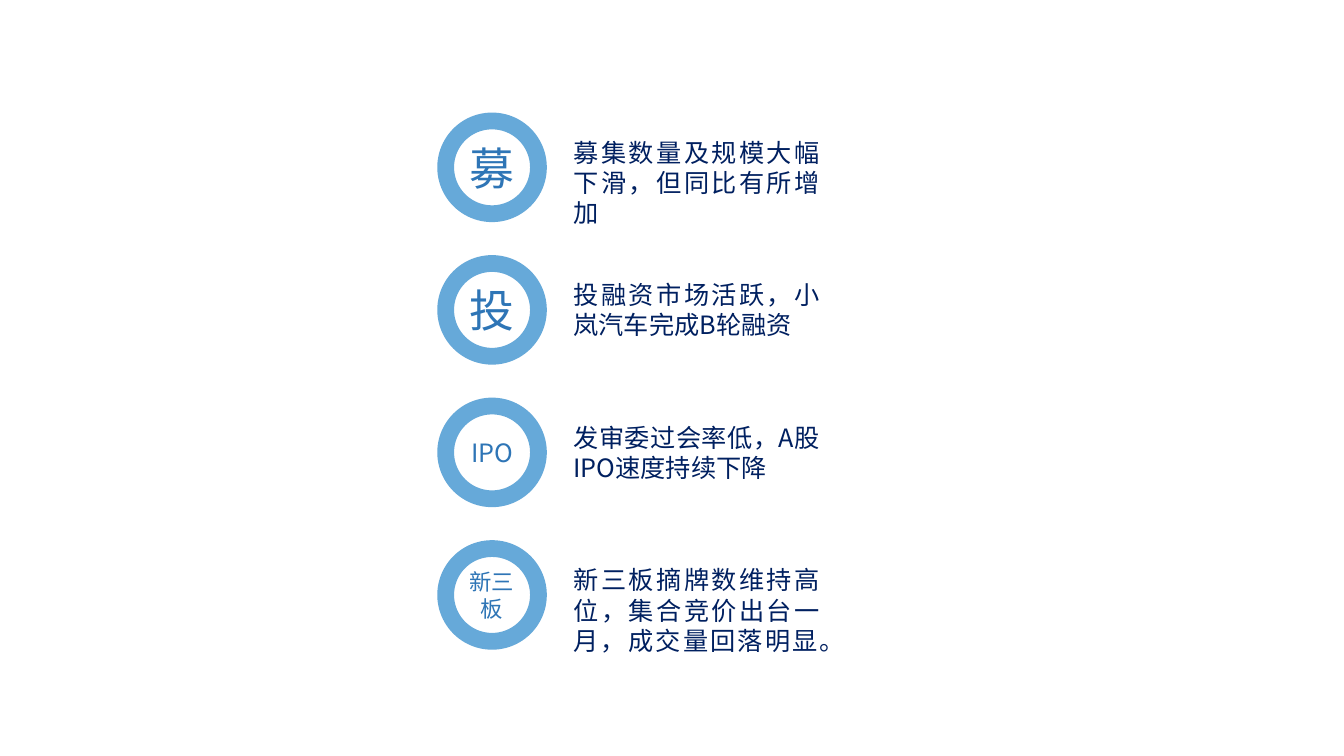
import dataclasses

import lxml.etree
import pptx
import pptx.dml.color
import pptx.enum.shapes
import pptx.enum.text
import pptx.oxml.ns
import pptx.util
from pptx.util import Inches


@dataclasses.dataclass(frozen=True)
class Theme:
    """Colours, fonts and type sizes of the slide."""
    ring: str = "0070C0"
    ring_opacity: int = 60
    ring_width: int = 12
    badge_text: str = "2E75B6"
    summary_text: str = "002060"
    badge_font: str = "Noto Sans CJK JP"
    summary_font: str = "Noto Sans CJK SC"
    character_size: int = 32
    acronym_size: int = 18
    board_size: int = 16
    summary_size: int = 18


THEME = Theme()
FIRST_TOP = 1.2
ROW_PITCH = 1.414
BADGE_LEFT = 4.42
BADGE_SIZE = 0.92
SUMMARY_LEFT = 5.59
SUMMARY_WIDTH = 2.64
SUMMARY_DROP = 0.11

TOPICS = [
    ("募", THEME.character_size, "募集数量及规模大幅下滑，但同比有所增加", 1.01),
    ("投", THEME.character_size, "投融资市场活跃，小岚汽车完成B轮融资", 0.71),
    ("IPO", THEME.acronym_size, "发审委过会率低，A股IPO速度持续下降", 0.71),
    ("新三板", THEME.board_size, "新三板摘牌数维持高位，集合竞价出台一月，成交量回落明显。", 1.01),
]


def add_words(frame, words, size, font, colour, alignment):
    """Write one run into the first paragraph of a text frame."""
    frame.word_wrap = True
    paragraph = frame.paragraphs[0]
    paragraph.alignment = alignment
    run = paragraph.add_run()
    run.text = words
    run.font.size = pptx.util.Pt(size)
    run.font.color.rgb = pptx.dml.color.RGBColor.from_string(colour)
    run.font.name = font
    lxml.etree.SubElement(
        run.font._element, pptx.oxml.ns.qn("a:ea"), typeface=font)


def add_badge(slide, top, label, size):
    """Draw a ring with its short label in the middle."""
    badge = slide.shapes.add_shape(
        pptx.enum.shapes.MSO_SHAPE.OVAL, Inches(BADGE_LEFT), Inches(top),
        Inches(BADGE_SIZE), Inches(BADGE_SIZE))
    badge.shadow.inherit = False
    badge.fill.background()
    badge.line.width = pptx.util.Pt(THEME.ring_width)
    badge.line.color.rgb = pptx.dml.color.RGBColor.from_string(THEME.ring)
    ring_colour = badge.line._ln.find(".//" + pptx.oxml.ns.qn("a:srgbClr"))
    lxml.etree.SubElement(ring_colour, pptx.oxml.ns.qn("a:alpha"),
                          val=str(THEME.ring_opacity * 1000))
    badge.text_frame.vertical_anchor = pptx.enum.text.MSO_ANCHOR.MIDDLE
    add_words(badge.text_frame, label, size, THEME.badge_font,
              THEME.badge_text, pptx.enum.text.PP_ALIGN.CENTER)


def add_summary(slide, top, words, height):
    """Place the justified sentence beside a badge."""
    summary = slide.shapes.add_textbox(
        Inches(SUMMARY_LEFT), Inches(top), Inches(SUMMARY_WIDTH),
        Inches(height))
    add_words(summary.text_frame, words, THEME.summary_size,
              THEME.summary_font, THEME.summary_text,
              pptx.enum.text.PP_ALIGN.JUSTIFY)
    summary.text_frame.auto_size = (
        pptx.enum.text.MSO_AUTO_SIZE.SHAPE_TO_FIT_TEXT)


def main():
    """Build the slide and save it."""
    deck = pptx.Presentation()
    deck.slide_width = Inches(13.33)
    deck.slide_height = Inches(7.5)
    slide = deck.slides.add_slide(deck.slide_layouts.get_by_name("Blank"))
    for row, (label, label_size, words, height) in enumerate(TOPICS):
        top = FIRST_TOP + row * ROW_PITCH
        add_badge(slide, top, label, label_size)
        add_summary(slide, top + SUMMARY_DROP, words, height)
    deck.save("out.pptx")


if __name__ == "__main__":
    main()
